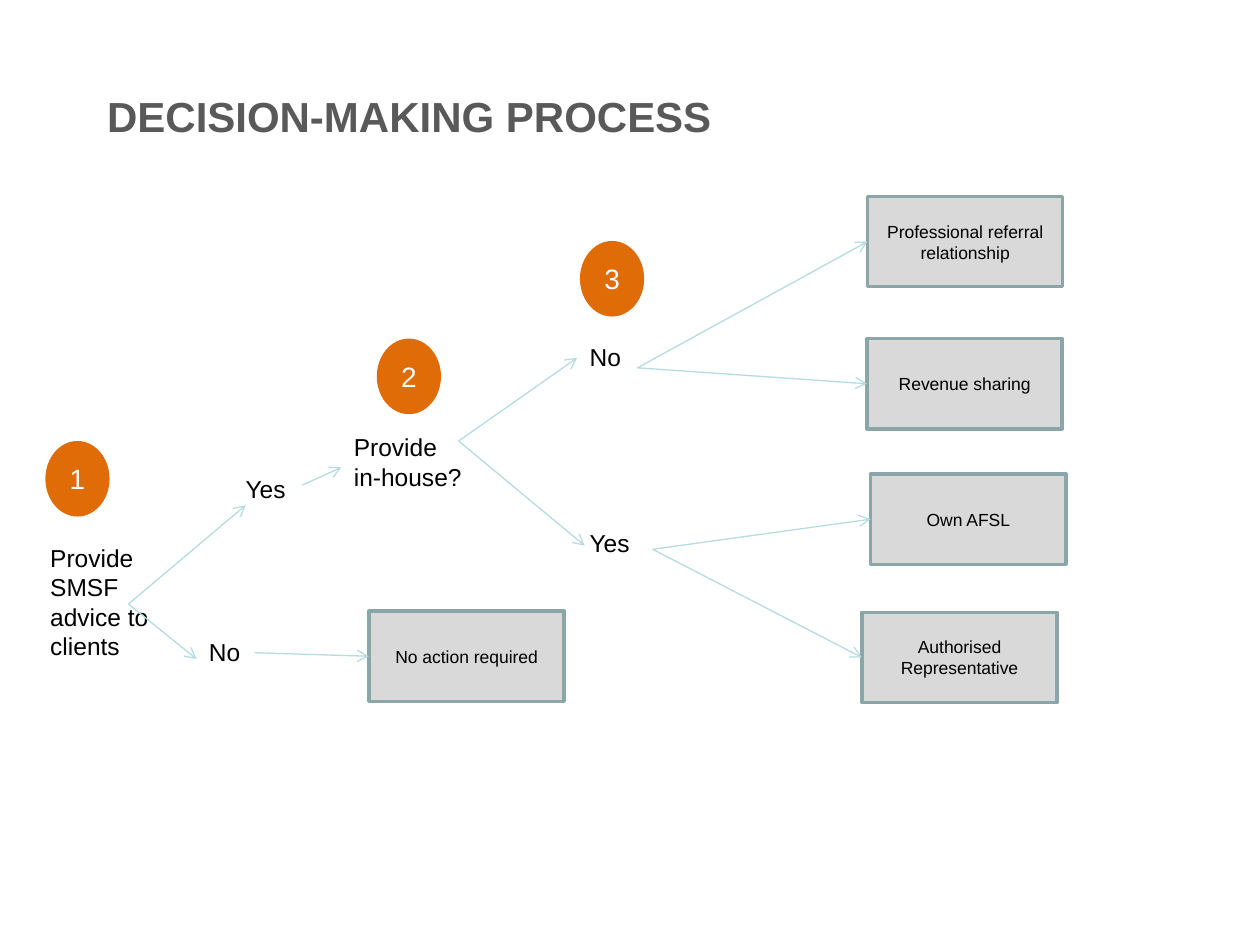
import pptx
import pptx.util
import pptx.dml.color
import pptx.enum.shapes
import pptx.enum.text
import pptx.oxml.ns
from lxml import etree

Pt = pptx.util.Pt
RGBColor = pptx.dml.color.RGBColor
SHAPE = pptx.enum.shapes.MSO_SHAPE
ALIGN = pptx.enum.text.PP_ALIGN
ANCHOR = pptx.enum.text.MSO_ANCHOR

BLACK = RGBColor(0, 0, 0)
WHITE = RGBColor(255, 255, 255)
TITLE_GREY = RGBColor(0x59, 0x59, 0x59)
BOX_GREY = RGBColor(0xD9, 0xD9, 0xD9)
BOX_EDGE = RGBColor(0x8A, 0xA6, 0xA8)
ARROW_TEAL = RGBColor(0xB6, 0xDC, 0xDF)
ORANGE = RGBColor(0xE0, 0x6C, 0x08)


def write_text(shape, text, size=14, color=BLACK, bold=False, align=ALIGN.LEFT,
               anchor=ANCHOR.TOP, wrap=True):
    frame = shape.text_frame
    frame.word_wrap = wrap
    frame.auto_size = pptx.enum.text.MSO_AUTO_SIZE.NONE
    frame.vertical_anchor = anchor
    frame.margin_left = frame.margin_right = Pt(7.2)
    frame.margin_top = frame.margin_bottom = Pt(3.6)
    para = frame.paragraphs[0]
    para.alignment = align
    span = para.add_run()
    span.text = text
    span.font.name = "Arial"
    span.font.size = Pt(size)
    span.font.bold = bold
    span.font.color.rgb = color


class DecisionTree:
    outcome_size = (111.6, 51.6)
    badge_size = (36.7, 43.2)

    def __init__(self, page):
        self.page = page

    def title(self, text, left, top, width, height):
        title = self.page.shapes.title
        title.left, title.top = Pt(left), Pt(top)
        title.width, title.height = Pt(width), Pt(height)
        write_text(title, text, size=24, color=TITLE_GREY, bold=True)

    def label(self, text, left, top, width, height, wrap=False):
        box = self.page.shapes.add_textbox(Pt(left), Pt(top), Pt(width), Pt(height))
        write_text(box, text, wrap=wrap)

    def filled(self, kind, left, top, size, fill):
        shape = self.page.shapes.add_shape(kind, Pt(left), Pt(top), *map(Pt, size))
        shape.shadow.inherit = False
        shape.fill.solid()
        shape.fill.fore_color.rgb = fill
        return shape

    def outcome(self, text, left, top):
        box = self.filled(SHAPE.RECTANGLE, left, top, self.outcome_size, BOX_GREY)
        box.line.color.rgb = BOX_EDGE
        box.line.width = Pt(2)
        write_text(box, text, size=10, align=ALIGN.CENTER, anchor=ANCHOR.MIDDLE)
        return box

    def badge(self, number, left, top):
        badge = self.filled(SHAPE.OVAL, left, top, self.badge_size, ORANGE)
        badge.line.fill.background()
        write_text(badge, str(number), size=16, color=WHITE, align=ALIGN.CENTER,
                   anchor=ANCHOR.MIDDLE)

    def arrow(self, start, end=(0, 0), target=None):
        arrow = self.page.shapes.add_connector(
            pptx.enum.shapes.MSO_CONNECTOR.STRAIGHT, *map(Pt, start + end))
        if target is not None:
            arrow.end_connect(target, 1)
        arrow.line.color.rgb = ARROW_TEAL
        arrow.line.width = Pt(0.75)
        qn = pptx.oxml.ns.qn
        etree.SubElement(arrow.line._get_or_add_ln(), qn("a:tailEnd"), type="arrow")
        etree.SubElement(arrow._element.spPr, qn("a:effectLst"))


def main():
    deck = pptx.Presentation()
    deck.slide_width, deck.slide_height = Pt(720), Pt(540)
    tree = DecisionTree(deck.slides.add_slide(deck.slide_layouts[5]))

    tree.title("DECISION-MAKING PROCESS", 54, 48.2, 589.7, 57.6)

    tree.label("Provide SMSF advice to clients", 21.6, 306.7, 82, 75, wrap=True)
    tree.label("Provide in-house?", 195.1, 243.4, 78.5, 41, wrap=True)
    for text, left, top, width in (
        ("Yes", 133.2, 267.1, 37.4),
        ("No", 112.3, 360.7, 33),
        ("Yes", 329.8, 298.1, 37.4),
        ("No", 329.8, 192.2, 32.4),
    ):
        tree.label(text, left, top, width, 24.5)

    for start, end in (
        ((262.1, 252), (329.8, 204.5)),
        ((262.1, 252), (334.1, 311.8)),
        ((73.4, 345.2), (140.4, 288.7)),
        ((73.4, 345.2), (112.3, 376.6)),
        ((172.8, 277.2), (195.1, 267.1)),
    ):
        tree.arrow(start, end)

    for text, left, top, start in (
        ("Professional referral relationship", 495.7, 112.3, (364.3, 210.2)),
        ("Revenue sharing", 495.4, 193.5, (364.3, 210.2)),
        ("Own AFSL", 497.5, 270.9, (373, 313.9)),
        ("Authorised Representative", 492.5, 349.9, (373, 313.9)),
        ("No action required", 210.8, 349.2, (145.4, 373)),
    ):
        tree.arrow(start, target=tree.outcome(text, left, top))

    for number, (left, top) in enumerate(
            ((25.9, 252), (215.3, 193.5), (331.4, 137.7)), start=1):
        tree.badge(number, left, top)

    deck.save("out.pptx")


if __name__ == "__main__":
    main()
